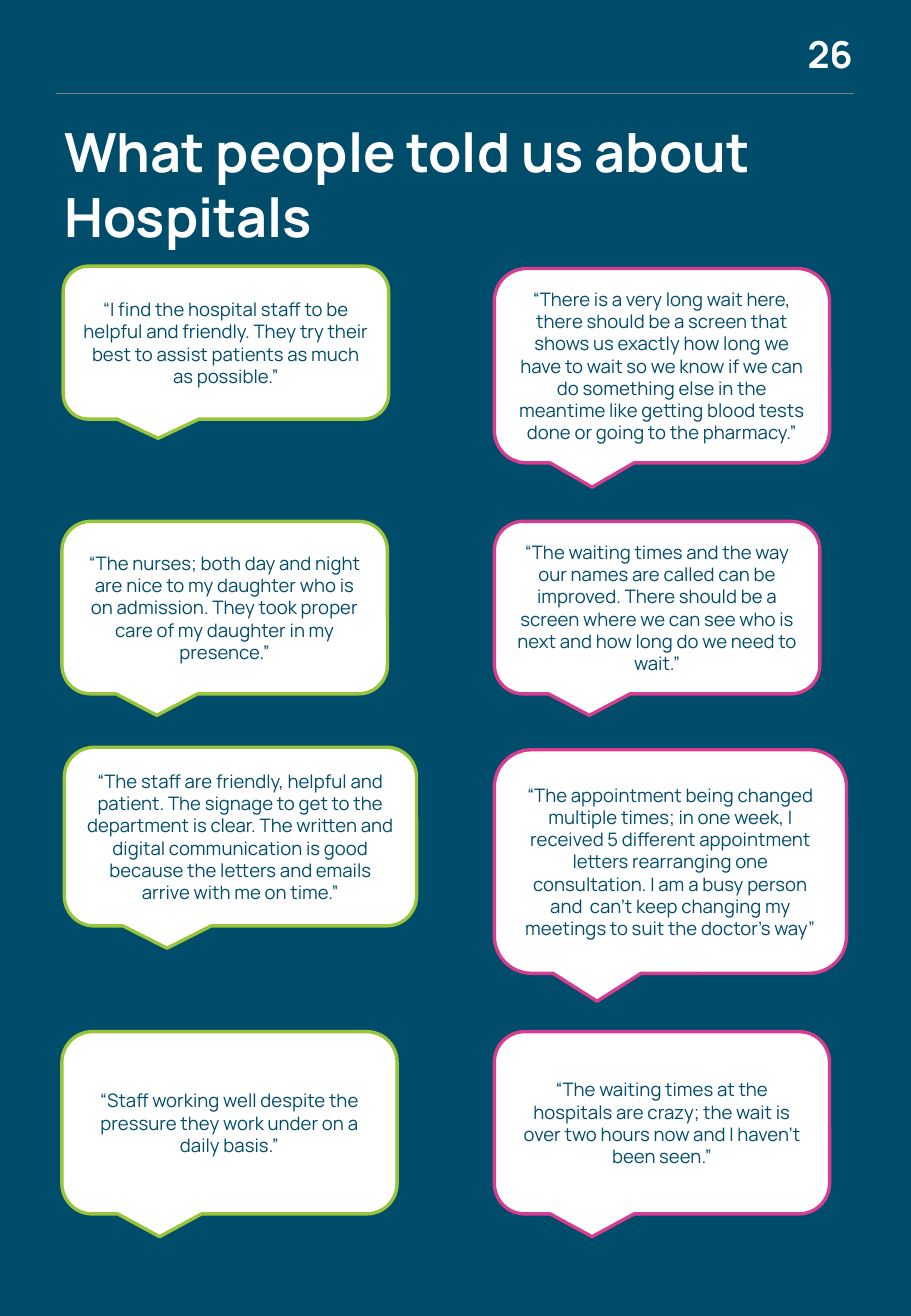
from typing import NamedTuple

from lxml import etree
from pptx import Presentation
from pptx import util as u
from pptx.dml.color import RGBColor
from pptx.enum import shapes, text
from pptx.oxml.ns import qn

FONT = "Manrope"
NAVY, WHITE, GREY = "004C6B", "FFFFFF", "808080"
GREEN, PINK = "9AC43A", "D83C8E"
LEFT, RIGHT = 0.51, 4.07


class Quote(NamedTuple):
    x: float
    y: float
    wide: float
    high: float
    edge: str
    words: str


QUOTES = [
    Quote(LEFT + 0.01, 2.19, 2.68, 1.26, GREEN,
          "“I find the hospital staff to be helpful and friendly. They try their "
          "best to assist patients as much as possible.”"),
    Quote(RIGHT, 2.21, 2.76, 1.6, PINK,
          "“There is a very long wait here, there should be a screen that shows us "
          "exactly how long we have to wait so we know if we can do something else "
          "in the meantime like getting blood tests done or going to the pharmacy.”"),
    Quote(LEFT, 4.29, 2.68, 1.42, GREEN,
          "“The nurses; both day and night are nice to my daughter who is on "
          "admission. They took proper care of my daughter in my presence.”"),
    Quote(RIGHT, 4.29, 2.68, 1.42, PINK,
          "“The waiting times and the way our names are called can be improved. "
          "There should be a screen where we can see who is next and how long do "
          "we need to wait.”"),
    Quote(LEFT + 0.02, 6.15, 2.9, 1.47, GREEN,
          "“The staff are friendly, helpful and patient. The signage to get to the "
          "department is clear. The written and digital communication is good "
          "because the letters and emails arrive with me on time.”"),
    Quote(RIGHT, 6.17, 2.9, 1.84, PINK,
          "“The appointment being changed multiple times; in one week, I received "
          "5 different appointment letters rearranging one consultation. I am a "
          "busy person and  can't keep changing my meetings to suit the doctor's way”"),
    Quote(LEFT, 8.49, 2.76, 1.5, GREEN,
          "“Staff working well despite the pressure they work under on a daily basis.”"),
    Quote(RIGHT, 8.49, 2.76, 1.5, PINK,
          "“The waiting times at the hospitals are crazy; the wait is over two hours "
          "now and I haven’t been seen.”"),
]


def paint(fill, shade: str) -> None:
    fill.solid()
    fill.fore_color.rgb = RGBColor.from_string(shade)


def write(frame, words: str, size: int, shade: str, align, bold: bool = False) -> None:
    frame.word_wrap = True
    frame.text = words
    para = frame.paragraphs[0]
    para.alignment = align
    font = para.runs[0].font
    font.name, font.size, font.bold = FONT, u.Pt(size), bold
    font.color.rgb = RGBColor.from_string(shade)


def rule(slide) -> None:
    """Draw the thin line below the page number."""
    line = slide.shapes.add_connector(
        shapes.MSO_CONNECTOR.STRAIGHT,
        u.Inches(0.46), u.Inches(0.77), u.Inches(7.03), u.Inches(0.77))
    paint(line.line.fill, GREY)
    line.line.width = u.Pt(0.75)
    etree.SubElement(line._element.spPr, qn("a:effectLst"))


def number(slide) -> None:
    frame = slide.shapes.add_textbox(
        u.Inches(6.38), u.Inches(0.26), u.Inches(0.64), u.Inches(0.39)).text_frame
    frame.margin_left = frame.margin_right = 0
    frame.margin_top = frame.margin_bottom = 0
    write(frame, "26", 22, WHITE, text.PP_ALIGN.RIGHT, bold=True)


def title(slide) -> None:
    frame = slide.shapes.add_textbox(
        u.Inches(0.43), u.Inches(0.93), u.Inches(6.52), u.Inches(1.18)).text_frame
    write(frame, "What people told us about Hospitals", 32, WHITE,
          text.PP_ALIGN.LEFT, bold=True)
    frame.auto_size = text.MSO_AUTO_SIZE.SHAPE_TO_FIT_TEXT


def bubble(slide, quote: Quote) -> None:
    shape = slide.shapes.add_shape(
        shapes.MSO_SHAPE.ROUNDED_RECTANGULAR_CALLOUT,
        u.Inches(quote.x), u.Inches(quote.y),
        u.Inches(quote.wide), u.Inches(quote.high))
    shape.shadow.inherit = False
    paint(shape.fill, WHITE)
    paint(shape.line.fill, quote.edge)
    shape.line.width = u.Pt(2)
    frame = shape.text_frame
    frame.vertical_anchor = text.MSO_ANCHOR.MIDDLE
    write(frame, quote.words, 11, NAVY, text.PP_ALIGN.CENTER)


def main() -> None:
    deck = Presentation()
    deck.slide_width, deck.slide_height = u.Inches(7.5), u.Inches(10.83)
    slide = deck.slides.add_slide(deck.slide_layouts[6])
    paint(slide.background.fill, NAVY)
    rule(slide)
    number(slide)
    title(slide)
    for quote in QUOTES:
        bubble(slide, quote)
    deck.save("out.pptx")


if __name__ == "__main__":
    main()
